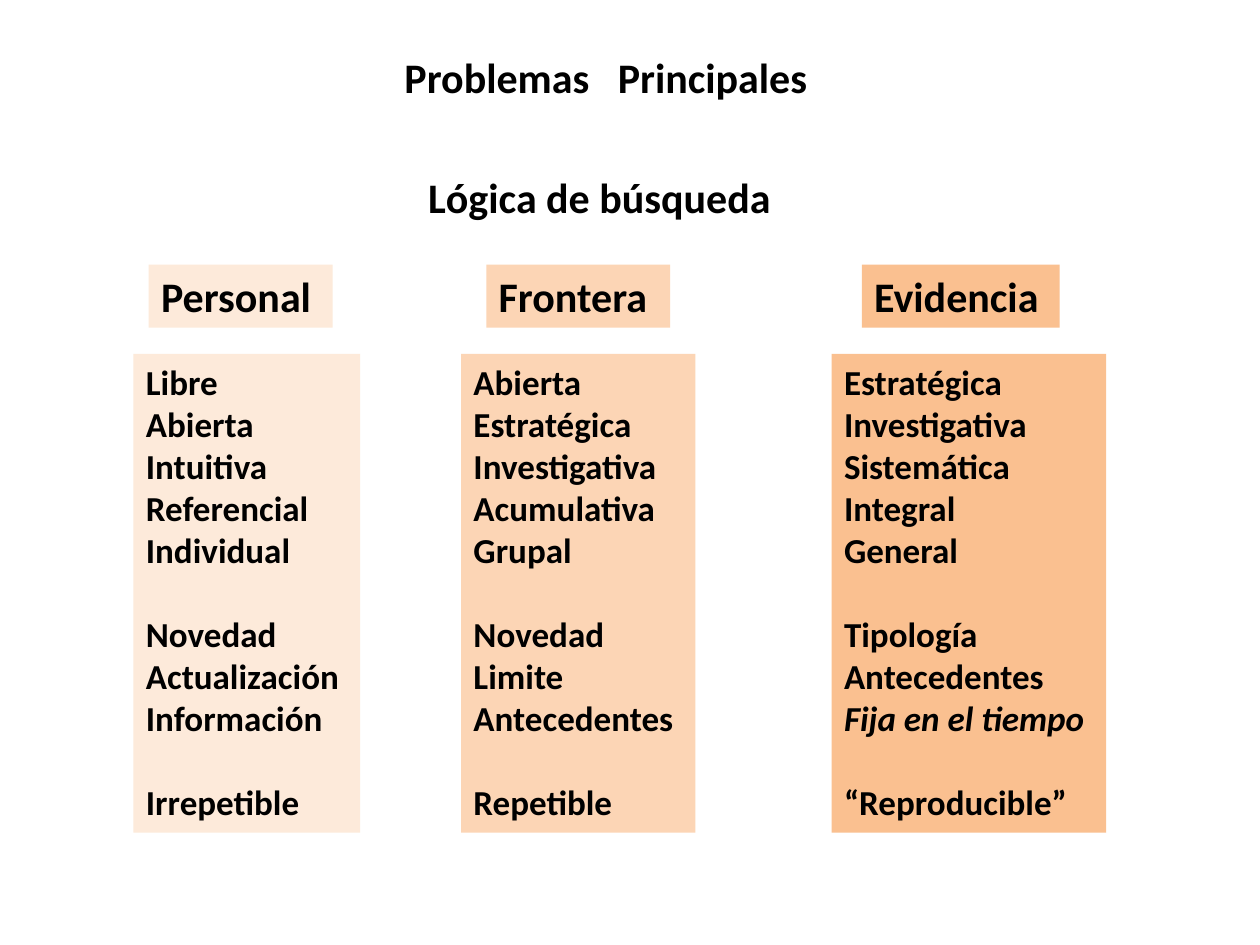
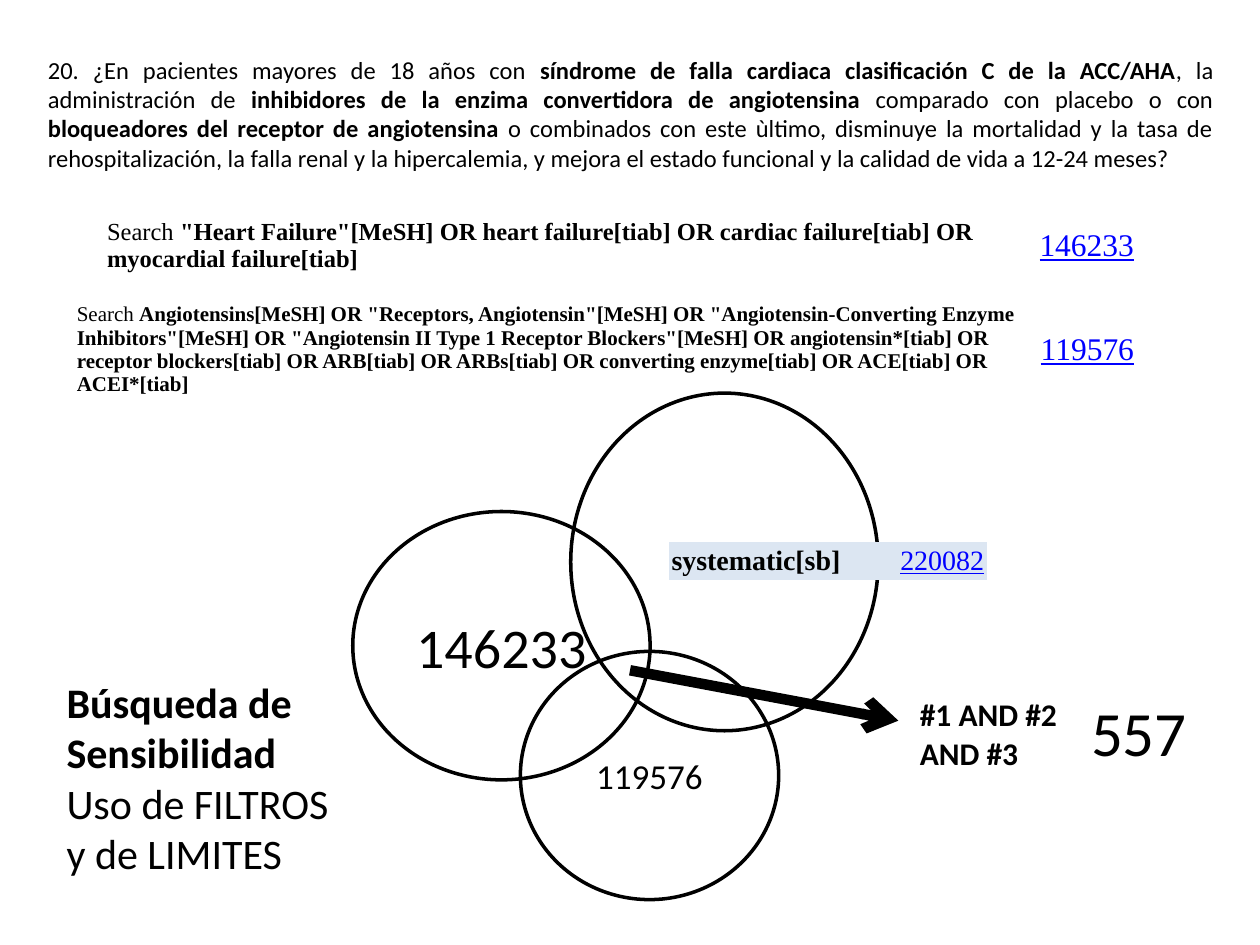
"""Builds two slides on search logic and a sensitive literature search."""
from dataclasses import dataclass
from typing import Any, NamedTuple

from pptx import Presentation
from pptx.dml.color import RGBColor
from pptx.enum.shapes import MSO_CONNECTOR, MSO_SHAPE
from pptx.enum.text import MSO_ANCHOR, MSO_AUTO_SIZE, PP_ALIGN
from pptx.oxml.ns import qn
from pptx.oxml.xmlchemy import OxmlElement
from pptx.slide import Slide
from pptx.util import Inches, Pt

COLORS = {
    "text": "000000",
    "count": "0000FF",
    "personal": "FDEADA",
    "frontier": "FCD5B5",
    "evidence": "FAC090",
    "filter": "DCE6F2",
}
SANS, SERIF = "Calibri", "Times New Roman"
TITLE_ONLY = 5
NO_STYLE = "{2D5ABB26-0587-4C30-8999-92F81FD0307C}"
HEADING = {"size": Pt(24), "bold": True}
LIST_ITEM = {"size": Pt(20), "bold": True}
COUNT = {"size": Pt(18), "name": SERIF, "underline": True, "color": "count"}
UNWRAPPED = {"word_wrap": False, "auto_size": MSO_AUTO_SIZE.NONE}
WRAPPED = {"word_wrap": True, "auto_size": MSO_AUTO_SIZE.NONE}
MIDDLE = {**WRAPPED, "vertical_anchor": MSO_ANCHOR.MIDDLE}
TIGHT = {f"margin_{side}": Inches(0.02) for side in ("left", "right", "top", "bottom")}


class Box(NamedTuple):
    """Left, top, width and height in inches."""

    left: float
    top: float
    width: float
    height: float

    def lengths(self) -> list[int]:
        """Return the four values as lengths."""
        return [Inches(value) for value in self]


class Span(NamedTuple):
    """A stretch of text and what sets it apart."""

    text: str
    style: dict[str, Any] = {}


@dataclass(frozen=True)
class SearchLogic:
    """One column: a heading above groups of traits."""

    heading: str
    color: str
    heading_left: float
    heading_width: float
    list_left: float
    list_width: float
    groups: list[list[str]]


@dataclass(frozen=True)
class SearchRow:
    """A search expression beside its result count."""

    box: Box
    count_width: float
    query: list[Span]
    query_style: dict[str, Any]
    count: str
    count_style: dict[str, Any]
    margins: dict[str, int]
    color: str = ""


@dataclass(frozen=True)
class ResultSet:
    """A circle of the Venn diagram."""

    box: Box
    count: str = ""
    size: int = 20


BOLD, ITALIC = {"bold": True}, {"italic": True}

LOGICS = [
    SearchLogic("Personal", "personal", 1.18, 1.46, 1.06, 1.8, [
        ["Libre", "Abierta", "Intuitiva", "Referencial", "Individual"],
        ["Novedad", "Actualización", "Información"],
        ["Irrepetible"]]),
    SearchLogic("Frontera", "frontier", 3.86, 1.46, 3.66, 1.86, [
        ["Abierta", "Estratégica", "Investigativa", "Acumulativa", "Grupal"],
        ["Novedad", "Limite", "Antecedentes"],
        ["Repetible"]]),
    SearchLogic("Evidencia", "evidence", 6.84, 1.57, 6.6, 2.18, [
        ["Estratégica", "Investigativa", "Sistemática", "Integral", "General"],
        ["Tipología", "Antecedentes", "Fija en el tiempo"],
        ["“Reproducible”"]]),
]
ITALIC_TRAITS = {"Fija en el tiempo"}

QUESTION = [
    Span("20. ¿En pacientes mayores de 18 años con "),
    Span("síndrome de falla cardiaca clasificación C de la ACC/AHA", BOLD),
    Span(", la administración de "),
    Span("inhibidores de la enzima convertidora de angiotensina ", BOLD),
    Span("comparado con placebo o con "),
    Span("bloqueadores del receptor de angiotensina ", BOLD),
    Span("o combinados con este ùltimo, disminuye la mortalidad y la tasa de "
         "rehospitalización, la falla renal y la hipercalemia, y mejora el estado "
         "funcional y la calidad de vida a 12-24 meses?"),
]

RESULT_SETS = [
    ResultSet(Box(2.8, 4.06, 2.36, 2.13), "146233", 32),
    ResultSet(Box(4.13, 5.17, 2.05, 1.97), "119576"),
    ResultSet(Box(4.53, 3.12, 2.44, 2.68)),
]

SEARCHES = [
    SearchRow(Box(7.2, 5.48, 2.32, 0.7), 0.97, [Span("#1 AND #2 AND #3", BOLD)],
              {"size": Pt(18)}, "557", {"size": Pt(36)}, {}),
    SearchRow(Box(0.83, 1.7, 8.19, 0.5), 0.79, [
        Span("Search "),
        Span('"Heart Failure"[MeSH] OR heart failure[tiab] OR cardiac failure[tiab] '
             "OR myocardial failure[tiab]", BOLD)],
        {"size": Pt(14), "name": SERIF}, "146233", COUNT, TIGHT),
    SearchRow(Box(0.59, 2.36, 8.43, 0.83), 0.81, [
        Span("Search "),
        Span('Angiotensins[MeSH] OR "Receptors, Angiotensin"[MeSH] OR '
             '"Angiotensin-Converting Enzyme Inhibitors"[MeSH] OR '
             '"Angiotensin II Type 1 Receptor Blockers"[MeSH] OR angiotensin*[tiab] OR '
             "receptor blockers[tiab] OR ARB[tiab] OR ARBs[tiab] OR "
             "converting enzyme[tiab] OR ACE[tiab] OR ACEI*[tiab]", BOLD)],
        {"size": Pt(12), "name": SERIF}, "119576", COUNT, TIGHT),
    SearchRow(Box(5.31, 4.3, 2.52, 0.3), 1, [Span("systematic[sb]", BOLD)],
              {"size": Pt(16), "name": SERIF}, "220082", {**COUNT, "size": Pt(16)},
              TIGHT, "filter"),
]


def rgb(key: str) -> RGBColor:
    """Return a palette colour."""
    return RGBColor.from_string(COLORS[key])


def apply(target: Any, values: dict[str, Any]) -> None:
    """Set each attribute of the target from the values."""
    for attribute, value in values.items():
        setattr(target, attribute, value)


def write(frame: Any, paragraphs: list[list[Span]], style: dict[str, Any],
          align: PP_ALIGN = PP_ALIGN.LEFT) -> None:
    """Fill a text frame with paragraphs of spans in one base style."""
    for number, spans in enumerate(paragraphs):
        paragraph = frame.add_paragraph() if number else frame.paragraphs[0]
        paragraph.alignment = align
        for span in spans:
            run = paragraph.add_run()
            run.text = span.text
            values = {"name": SANS, "bold": False, "color": "text", **style, **span.style}
            run.font.color.rgb = rgb(values.pop("color"))
            apply(run.font, values)


def place_title(slide: Slide, box: Box, spans: list[Span], style: dict[str, Any],
                frame_format: dict[str, Any], align: PP_ALIGN) -> None:
    """Move the title placeholder and write in it."""
    title = slide.shapes.title
    apply(title, dict(zip(("left", "top", "width", "height"), box.lengths())))
    apply(title.text_frame, frame_format)
    write(title.text_frame, [spans], style, align)


def add_text(slide: Slide, box: Box, paragraphs: list[list[Span]], style: dict[str, Any],
             frame_format: dict[str, Any], color: str = "") -> Any:
    """Add a text box, filled if a colour is given, and return its frame."""
    label = slide.shapes.add_textbox(*box.lengths())
    if color:
        label.fill.solid()
        label.fill.fore_color.rgb = rgb(color)
    apply(label.text_frame, frame_format)
    write(label.text_frame, paragraphs, style)
    return label.text_frame


def add_logic(slide: Slide, logic: SearchLogic) -> None:
    """Draw the heading and the trait list of one search logic."""
    add_text(slide, Box(logic.heading_left, 2.1, logic.heading_width, 0.5),
             [[Span(logic.heading)]], HEADING, UNWRAPPED, logic.color)
    traits = [trait for group in logic.groups for trait in group]
    spans = [[Span(trait, ITALIC if trait in ITALIC_TRAITS else {})] for trait in traits]
    frame = add_text(slide, Box(logic.list_left, 2.81, logic.list_width, 3.8),
                     spans, LIST_ITEM, UNWRAPPED, logic.color)
    group_starts = {group[0] for group in logic.groups[1:]}
    for paragraph, trait in zip(frame.paragraphs, traits):
        if trait in group_starts:
            paragraph.space_before = Pt(24)


def add_result_set(slide: Slide, result: ResultSet) -> None:
    """Draw one outlined circle with its count."""
    circle = slide.shapes.add_shape(MSO_SHAPE.OVAL, *result.box.lengths())
    circle.shadow.inherit = False
    circle.fill.background()
    circle.line.color.rgb = rgb("text")
    circle.line.width = Pt(2)
    if result.count:
        apply(circle.text_frame, MIDDLE)
        write(circle.text_frame, [[Span(result.count)]], {"size": Pt(result.size)},
              PP_ALIGN.CENTER)


def add_search(slide: Slide, search: SearchRow) -> None:
    """Add the one-row table of a search and its count."""
    table = slide.shapes.add_table(1, 2, *search.box.lengths()).table
    apply(table, {"first_row": False, "horz_banding": False})
    table._tbl.tblPr.find(qn("a:tableStyleId")).text = NO_STYLE
    widths = (search.box.width - search.count_width, search.count_width)
    contents = (
        (search.query, search.query_style, PP_ALIGN.LEFT),
        ([Span(search.count)], search.count_style, PP_ALIGN.RIGHT),
    )
    for column, (width, (spans, style, align)) in enumerate(zip(widths, contents)):
        table.columns[column].width = Inches(width)
        cell = table.cell(0, column)
        apply(cell, {"vertical_anchor": MSO_ANCHOR.MIDDLE, **search.margins})
        if search.color:
            cell.fill.solid()
            cell.fill.fore_color.rgb = rgb(search.color)
        else:
            cell.fill.background()
        write(cell.text_frame, [spans], style, align)


def add_arrow(slide: Slide) -> None:
    """Point from the intersection to the combined search."""
    arrow = slide.shapes.add_connector(
        MSO_CONNECTOR.STRAIGHT, Inches(5), Inches(5.32), Inches(7.13), Inches(5.72))
    arrow.line.color.rgb = rgb("text")
    arrow.line.width = Pt(6)
    head = OxmlElement("a:tailEnd")
    head.set("type", "arrow")
    arrow.line._get_or_add_ln().append(head)
    arrow._element.spPr.append(OxmlElement("a:effectLst"))


def build_logics(slide: Slide) -> None:
    """Compare the three search logics."""
    place_title(slide, Box(3.11, 0.36, 3.54, 0.5),
                [Span("Problemas"), Span(" "), Span("Principales")],
                HEADING, UNWRAPPED, PP_ALIGN.LEFT)
    word_gap = slide.shapes.title.text_frame.paragraphs[0].runs[1]
    word_gap._r.get_or_add_rPr().set("spc", "1080")
    add_text(slide, Box(3.3, 1.31, 3.12, 0.5), [[Span("Lógica de búsqueda")]],
             HEADING, UNWRAPPED)
    for logic in LOGICS:
        add_logic(slide, logic)


def build_sensitive_search(slide: Slide) -> None:
    """Show the question, its searches and their intersection."""
    place_title(slide, Box(0.28, 0.38, 9.45, 1.04), QUESTION, {"size": Pt(14)},
                MIDDLE, PP_ALIGN.JUSTIFY)
    for result in RESULT_SETS:
        add_result_set(slide, result)
    add_arrow(slide)
    add_text(slide, Box(0.43, 5.32, 2.6, 1.72), [
        [Span("Búsqueda de", BOLD)], [Span("Sensibilidad", BOLD)],
        [Span("Uso de FILTROS")], [Span("y de LIMITES")]], {"size": Pt(24)}, WRAPPED)
    for search in SEARCHES:
        add_search(slide, search)


def main() -> None:
    """Build and save the presentation."""
    deck = Presentation()
    apply(deck, {"slide_width": Inches(10), "slide_height": Inches(7.5)})
    for build in (build_logics, build_sensitive_search):
        build(deck.slides.add_slide(deck.slide_layouts[TITLE_ONLY]))
    deck.save("out.pptx")


if __name__ == "__main__":
    main()
